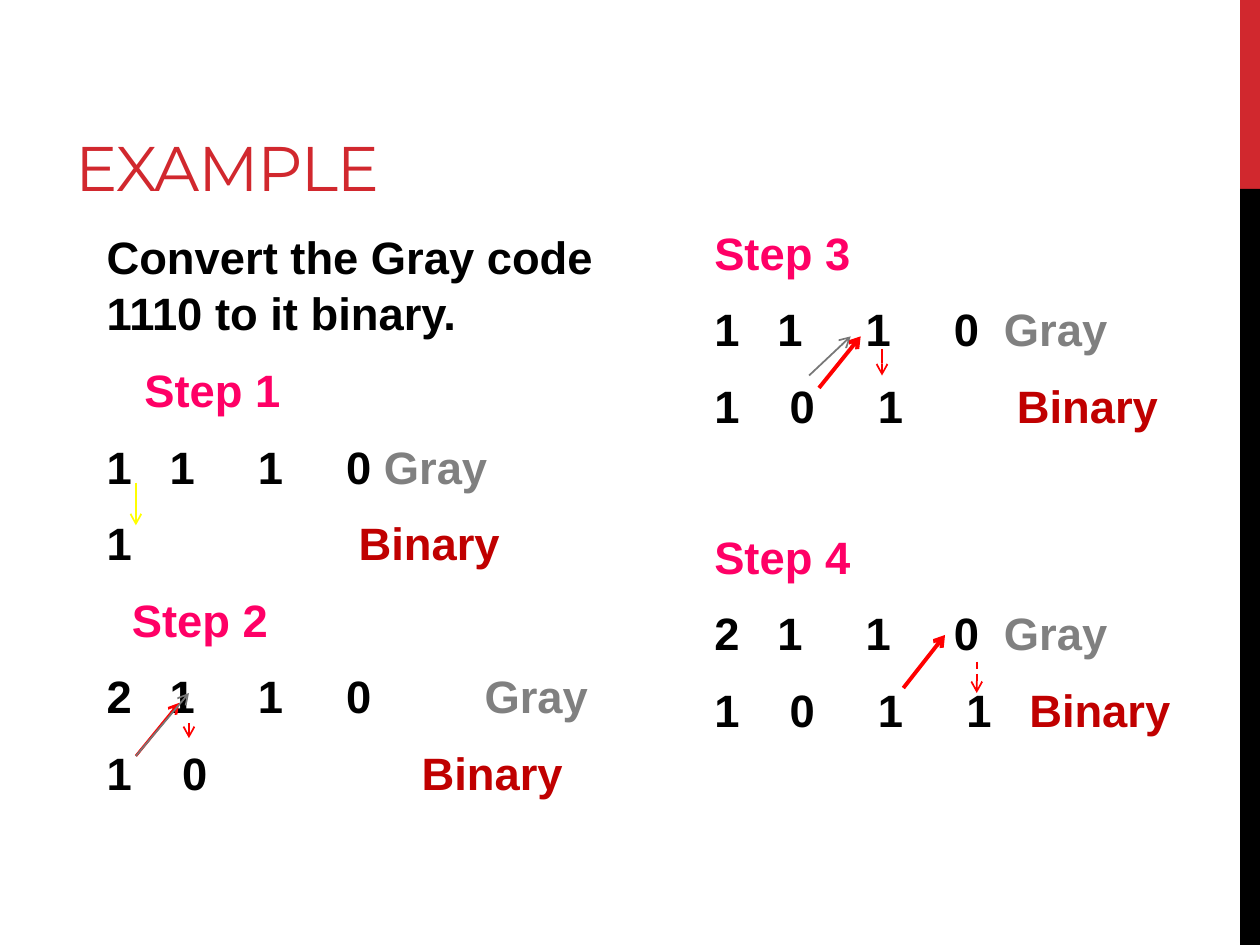
from dataclasses import dataclass
from lxml import etree
from pptx import Presentation
from pptx import util as u
from pptx.dml.color import RGBColor
from pptx.enum import dml, shapes, text
from pptx.oxml import ns


@dataclass(frozen=True)
class Theme:
    """Colours, fonts and type sizes of the slide."""
    accent: str = "D1282E"
    ink: str = "000000"
    step: str = "FF0066"
    gray: str = "808080"
    binary: str = "C00000"
    red: str = "FF0000"
    yellow: str = "FFFF00"
    shade: str = "777777"
    title_font: str = "Montserrat"
    body_font: str = "Arial"
    title_size: float = 36
    body_size: float = 25.9


THEME = Theme()
GRAY_STOPS = (1.27, 3.05, 4.83)
BINARY_STOPS = (1.52, 3.3, 5.08)
ROW_GAP = 5.4
WIDE_GAP = 47.7


def colour(value):
    """Return a colour object for a hex value."""
    return RGBColor.from_string(value)


def add_text_box(page, box):
    """Add a wrapping text box and return its text frame."""
    frame = page.shapes.add_textbox(*map(u.Cm, box)).text_frame
    frame.word_wrap = True
    return frame


def style_span(span, font, size, value, bold=False):
    """Set the font of one run."""
    span.font.name = font
    span.font.size = u.Pt(size)
    span.font.bold = bold
    span.font.color.rgb = colour(value)


def add_side_bar(page, box, split):
    """Draw the two-part bar, accent above the split and ink below."""
    left, top, width, height = box
    parts = ((top, split, THEME.accent), (top + split, height - split, THEME.ink))
    for part_top, part_height, value in parts:
        bar = page.shapes.add_shape(
            shapes.MSO_SHAPE.RECTANGLE, *map(u.Cm, (left, part_top, width, part_height)))
        bar.shadow.inherit = False
        bar.fill.solid()
        bar.fill.fore_color.rgb = colour(value)
        bar.line.fill.background()


def add_title(page, box, wording):
    """Place the title at the bottom of its box."""
    frame = add_text_box(page, box)
    frame.vertical_anchor = text.MSO_ANCHOR.BOTTOM
    frame.text = wording
    span = frame.paragraphs[0].runs[0]
    style_span(span, THEME.title_font, THEME.title_size, THEME.accent)
    span.font._element.set("spc", "-60")


def set_tab_stops(para, stops):
    """Give a paragraph left-aligned tab stops."""
    tabs = etree.SubElement(para._p.get_or_add_pPr(), ns.qn("a:tabLst"))
    for stop in stops:
        etree.SubElement(tabs, ns.qn("a:tab"), pos=str(u.Cm(stop)), algn="l")


def heading(wording, value=THEME.step, indent=0, gap=ROW_GAP):
    """Describe a line of one colour."""
    return [(wording, value)], (), indent, gap


def code_row(digits, label, value, stops, label_at):
    """Describe a row of digits closed by a coloured label."""
    spans = [("\t".join(digits) + "\t", THEME.ink), (label, value)]
    return spans, stops[:len(digits) - 1] + (label_at,), 0, ROW_GAP


def gray_row(digits, label_at):
    """Describe a Gray code row."""
    return code_row(digits, "Gray", THEME.gray, GRAY_STOPS, label_at)


def binary_row(digits, label_at):
    """Describe a binary row."""
    return code_row(digits, "Binary", THEME.binary, BINARY_STOPS, label_at)


def add_arrow(page, box, start, end, value, width, dash=None):
    """Draw an arrow between two points measured from the box corner."""
    left, top = box[:2]
    points = (left + start[0], top + start[1], left + end[0], top + end[1])
    arrow = page.shapes.add_connector(shapes.MSO_CONNECTOR.STRAIGHT, *map(u.Cm, points))
    arrow.line.color.rgb = colour(value)
    arrow.line.width = u.Pt(width)
    if dash:
        arrow.line.dash_style = dash
    etree.SubElement(arrow.line._get_or_add_ln(), ns.qn("a:tailEnd"), type="arrow")
    etree.SubElement(arrow._element.spPr, ns.qn("a:effectLst"))


def add_column(page, box, lines, arrows):
    """Write one column of steps and draw its arrows."""
    frame = add_text_box(page, box)
    for index, (spans, stops, indent, gap) in enumerate(lines):
        para = frame.add_paragraph() if index else frame.paragraphs[0]
        para.line_spacing = 1.04
        para.space_before = u.Pt(gap if index else 0)
        para.space_after = u.Pt(6)
        para._p.get_or_add_pPr().set("marL", str(u.Cm(indent)))
        if stops:
            set_tab_stops(para, stops)
        for wording, value in spans:
            span = para.add_run()
            span.text = wording
            style_span(span, THEME.body_font, THEME.body_size, value, bold=True)
    for arrow in arrows:
        add_arrow(page, box, *arrow)


def main():
    """Build and save the slide."""
    deck = Presentation()
    deck.slide_width, deck.slide_height = u.Cm(25.4), u.Cm(19.05)
    page = deck.slides.add_slide(deck.slide_layouts[6])
    add_side_bar(page, (25, 0, 0.4, 19.05), 3.81)
    add_title(page, (1.27, 0.43, 16.08, 3.81), "EXAMPLE")
    add_column(page, (1.9, 4.45, 10.39, 12.57), [
        heading("Convert the Gray code 1110 to it binary.", THEME.ink),
        heading("Step 1", indent=0.76),
        gray_row("1110", 5.59),
        binary_row("1", 5.08),
        heading("Step 2", indent=0.51),
        gray_row("2110", 7.62),
        binary_row("10", 6.35),
    ], [
        ((0.84, 10.79), (1.71, 9.72), THEME.red, 1.5),
        ((1.91, 10.13), (1.91, 10.43), THEME.red, 1),
        ((0.84, 5.28), (0.84, 6.14), THEME.yellow, 1),
        ((0.84, 10.79), (1.91, 9.52), THEME.shade, 1),
    ])
    add_column(page, (14.15, 4.37, 10.21, 12.57), [
        heading("Step 3"),
        gray_row("1110", 5.84),
        binary_row("101", 6.1),
        heading("Step 4", gap=WIDE_GAP),
        gray_row("2110", 5.84),
        binary_row("1011", 6.35),
    ], [
        ((2.36, 3.45), (3.2, 2.41), THEME.red, 2.25),
        ((3.63, 2.67), (3.63, 3.2), THEME.red, 1, dml.MSO_LINE.LONG_DASH),
        ((5.54, 8.97), (5.54, 9.6), THEME.red, 1, dml.MSO_LINE.DASH),
        ((4.06, 9.5), (4.9, 8.43), THEME.red, 2.25),
        ((2.16, 3.2), (3, 2.41), THEME.shade, 1),
    ])
    deck.save("out.pptx")


if __name__ == "__main__":
    main()
